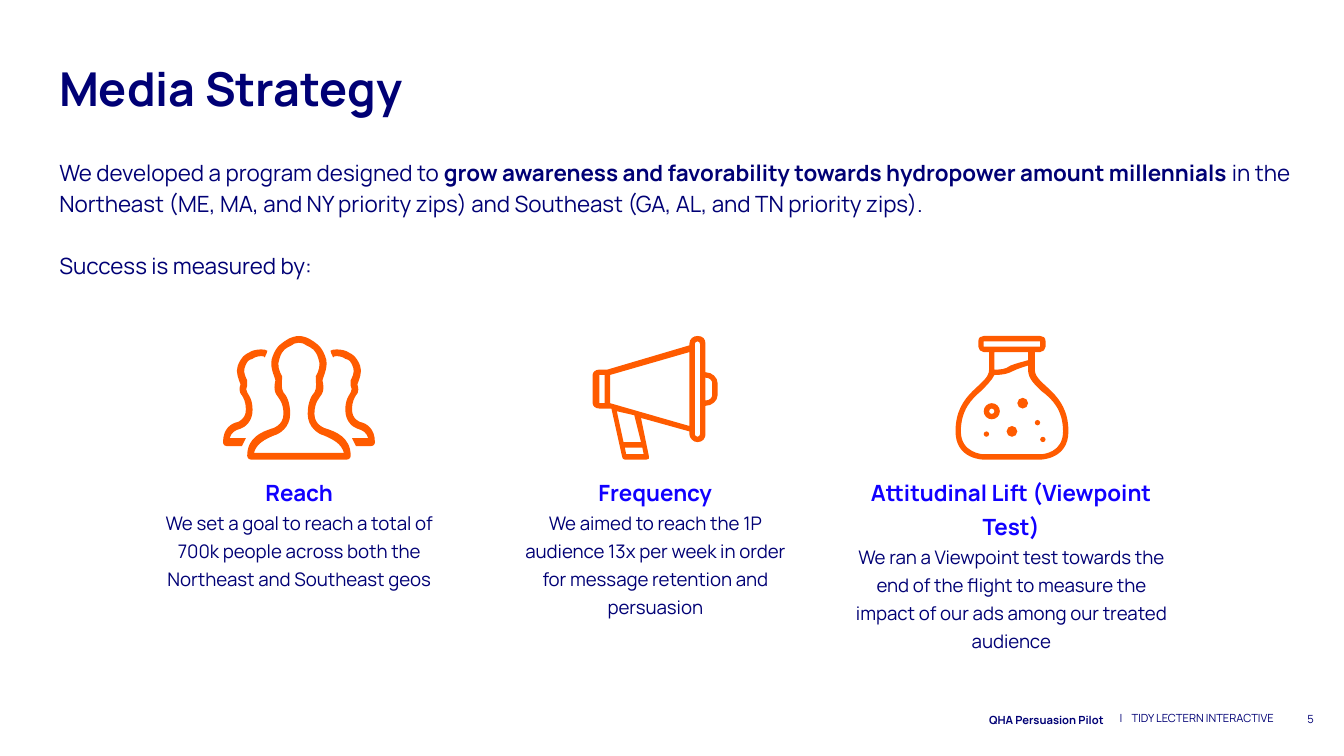
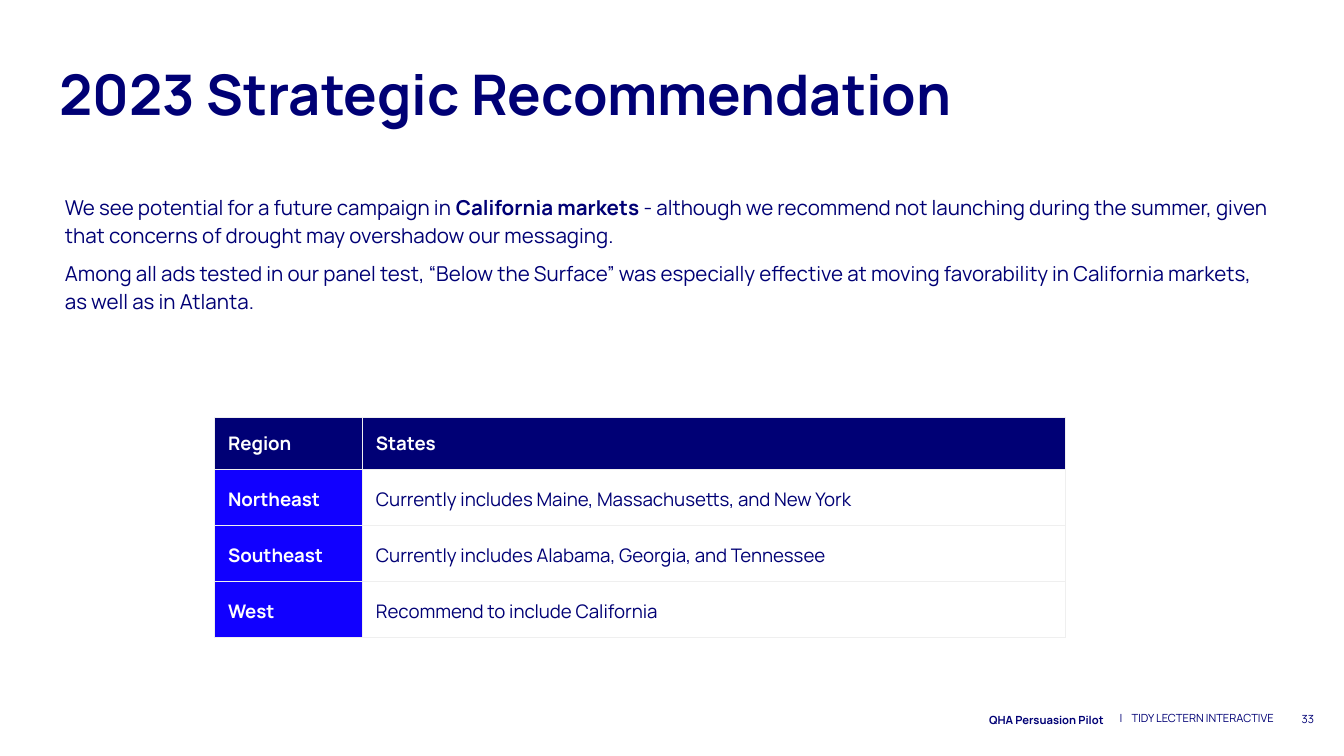
from lxml import etree
from pptx import Presentation
from pptx.dml.color import RGBColor
from pptx.enum import text
from pptx.oxml import ns
from pptx.util import Pt

FONT = "Manrope"
COLORS = {"navy": "000075", "blue": "1100FF", "orange": "FF5B00", "white": "FFFFFF", "rule": "EFEFEF"}
LEFT, CENTER, RIGHT = text.PP_ALIGN.LEFT, text.PP_ALIGN.CENTER, text.PP_ALIGN.RIGHT
TOP, MIDDLE = text.MSO_ANCHOR.TOP, text.MSO_ANCHOR.MIDDLE
INSET = 7.2
ICON_UNIT = Pt(0.72)

PROJECT = "QHA Persuasion Pilot"
AGENCY = "|\tTIDY LECTERN INTERACTIVE"

STRATEGY = {
    "title": "Media Strategy", "size": 25, "title_area": (653, 40.3), "number": "5",
    "intro": [
        [("We developed a program designed to ", False),
         ("grow awareness and favorability towards hydropower amount millennials", True),
         (" in the Northeast (ME, MA, and NY priority zips) and Southeast (GA, AL, and TN priority zips).", False)],
        [("Success is measured by:", False)],
    ],
    "measures": [
        (77.8, 164.9, 126.7, "Reach",
         "We set a goal to reach a total of 700k people across both the Northeast and Southeast geos"),
        (268.6, 164.9, 102.2, "Frequency",
         "We aimed to reach the 1P audience 13x per week in order for message retention and persuasion"),
        (449.3, 185, 136.1, "Attitudinal Lift (Viewpoint Test)",
         "We ran a Viewpoint test towards the end of the flight to measure the impact of our ads "
         "among our treated audience"),
    ],
}

RECOMMENDATION = {
    "title": "2023 Strategic Recommendation", "size": 30, "title_area": (671, 54), "number": "33",
    "intro": [
        [("We see potential for a future campaign in ", False), ("California markets", True),
         (" - although we recommend not launching during the summer, given that concerns of drought "
          "may overshadow our messaging.", False)],
        [("Among all ads tested in our panel test, “Below the Surface” was especially effective at "
          "moving favorability in California markets, as well as in Atlanta.", False)],
    ],
    "regions": [
        ("Region", "States"),
        ("Northeast", "Currently includes Maine, Massachusetts, and New York"),
        ("Southeast", "Currently includes Alabama, Georgia, and Tennessee"),
        ("West", "Recommend to include California"),
    ],
}

HEAD_OUTER = [
    (222.5, 250), (220, 250, 217, 251, 215, 252), (210, 255, 206, 257, 203, 265),
    (200, 272, 204, 279, 205, 283), (203, 291, 206, 294, 206, 294), (207, 296, 211, 299, 211, 308),
    (211, 317, 202, 319, 202, 319), (196, 321, 184, 325, 184, 339), (184, 339, 184, 342, 187, 342),
    (222.5, 342)]
HEAD_INNER = [
    (222.5, 255), (220, 255, 218, 256, 217, 257), (213, 259, 210, 260, 208, 267),
    (206, 271, 208, 277, 210, 280), (210, 284, 209, 289, 211, 292), (213, 294, 216, 299, 216, 308),
    (216, 318, 208, 323, 204, 324), (197, 327, 191, 330, 189, 337), (222.5, 337)]
NEIGHBOR = [
    (179, 319), (182, 318, 188, 314, 188, 305), (188, 297, 185, 294, 184, 292),
    (183, 290, 183, 289, 184, 287), (184, 286, 184, 284, 184, 283), (183, 281, 181, 277, 182, 274),
    (184, 268, 185, 268, 188, 267), (189, 266, 192, 265, 194, 265), (196, 265, 197, 265, 197, 266),
    (198, 264, 199, 262, 199, 261), (198, 260, 196, 260, 194, 260), (191, 260, 187, 261, 186, 262),
    (182, 264, 180, 265, 177, 272), (175, 277, 178, 283, 179, 286), (177, 292, 180, 294, 180, 294),
    (181, 296, 183, 298, 183, 305), (183, 312, 177, 314, 177, 314), (172, 315, 166, 319, 166, 329),
    (166, 329, 166, 332, 169, 332), (180, 332), (183, 326), (171, 326), (172, 322, 175, 320, 179, 319)]
MEGAPHONE = [
    [(525, 277), (525, 256), (525, 252, 523, 250, 519, 250), (516, 250, 513, 252, 513, 256), (513, 257),
     (452, 275), (446, 275), (443, 275, 441, 277, 441, 279), (441, 300), (441, 302, 443, 304, 446, 304),
     (455, 304), (463, 340), (463, 341, 464, 342, 465, 342), (481, 342), (483, 342, 483, 341, 483, 340),
     (477, 311), (513, 321), (513, 323), (513, 326, 516, 329, 519, 329), (523, 329, 525, 326, 525, 323),
     (525, 302), (530, 302, 534, 298, 534, 294), (534, 285), (534, 281, 530, 277, 525, 277)],
    [(525, 281), (528, 281, 530, 283, 530, 285), (530, 294), (530, 296, 528, 298, 525, 298)],
    [(517, 256), (517, 255, 518, 254, 519, 254), (520, 254, 521, 255, 521, 256), (521, 323),
     (521, 324, 520, 325, 519, 325), (518, 325, 517, 324, 517, 323)],
    [(454, 279), (513, 262), (513, 317), (454, 300)],
    [(459, 306), (472, 309), (477, 329), (464, 329)],
    [(465, 333), (478, 333), (479, 338), (466, 338)],
    [(446, 279), (450, 279), (450, 300), (446, 300)],
]
FLASK_OUTER = [
    (753, 250), (732, 250), (730, 250, 728, 251, 728, 254), (728, 258), (728, 260, 730, 262, 732, 262),
    (736, 262), (736, 275), (736, 287, 711, 291, 711, 321), (711, 342, 732, 342, 732, 342), (753, 342)]
FLASK_HOLES = [
    [(732, 254), (774, 254), (774, 258), (732, 258)],
    [(740, 262), (765, 262), (765, 268), (762, 269, 757, 270, 752, 272), (748, 275, 744, 275, 740, 275)],
    [(774, 338), (732, 338), (731, 338, 715, 337, 715, 321), (715, 305, 723, 297, 730, 291),
     (734, 287, 738, 283, 740, 279), (747, 279, 750, 278, 754, 276), (758, 274, 762, 273, 765, 272),
     (765, 275), (765, 282, 770, 286, 775, 291), (783, 297, 791, 305, 791, 321),
     (791, 337, 776, 338, 774, 338)],
]
BUBBLES = [(753, 321, 4), (761, 300, 4), (772, 314.5, 2), (776, 327, 2), (738, 306, 6), (738, 306, 2),
           (734, 323, 2)]


def color(name):
    return RGBColor.from_string(COLORS[name])


def outline(steps):
    points = [step[i:i + 2] for step in steps for i in range(0, len(step), 2)]
    return points, [len(step) // 2 for step in steps[1:]]


def mirror(contour, axis):
    points, counts = contour
    return [(2 * axis - x, y) for x, y in reversed(points)], counts[::-1]


def symmetric(steps):
    points, counts = outline(steps)
    others, other_counts = mirror((points, counts), steps[0][0])
    return points + others[1:], counts + other_counts


def circle(x, y, radius):
    k = 0.55 * radius
    r = radius
    return outline([
        (x + r, y), (x + r, y + k, x + k, y + r, x, y + r), (x - k, y + r, x - r, y + k, x - r, y),
        (x - r, y - k, x - k, y - r, x, y - r), (x + k, y - r, x + r, y - k, x + r, y)])


def bend(lines):
    curve = etree.Element(ns.qn("a:cubicBezTo"))
    lines[0].addprevious(curve)
    for line in lines:
        curve.append(line[0])
        line.getparent().remove(line)


def add_icon(page, contours):
    builder, all_counts = None, []
    for contour, counts in contours:
        points = [(x * ICON_UNIT, y * ICON_UNIT) for x, y in contour]
        if builder is None:
            builder = page.shapes.build_freeform(*points[0], scale=1.0)
        else:
            builder.move_to(*points[0])
        builder.add_line_segments(points[1:], close=False)
        all_counts += counts
    icon = builder.convert_to_shape()
    lines = iter(list(icon._element.iter(ns.qn("a:lnTo"))))
    for count in all_counts:
        step = [next(lines) for _ in range(count)]
        if count == 3:
            bend(step)
    for start in list(icon._element.iter(ns.qn("a:moveTo")))[1:]:
        start.addprevious(etree.Element(ns.qn("a:close")))
    etree.SubElement(next(icon._element.iter(ns.qn("a:path"))), ns.qn("a:close"))
    icon.shadow.inherit = False
    icon.fill.solid()
    icon.fill.fore_color.rgb = color("orange")
    icon.line.fill.background()


def style(para, size, ink="navy", bold=False, align=LEFT, spacing=None, before=None):
    para.alignment = align
    para.line_spacing = spacing
    para.space_before = before
    font = para.font
    font.name, font.size, font.bold = FONT, Pt(size), bold
    font.color.rgb = color(ink)


def frame_of(box, anchor=TOP, inset=INSET):
    frame = box.text_frame
    frame.word_wrap = True
    frame.auto_size = text.MSO_AUTO_SIZE.NONE
    frame.vertical_anchor = anchor
    frame.margin_left = frame.margin_right = frame.margin_top = frame.margin_bottom = Pt(inset)
    return frame


def add_box(page, place, anchor=TOP, inset=INSET):
    return frame_of(page.shapes.add_textbox(*map(Pt, place)), anchor, inset)


def add_intro(page, place, paragraphs, size, gap):
    frame = add_box(page, place)
    for index, spans in enumerate(paragraphs):
        para = frame.add_paragraph() if index else frame.paragraphs[0]
        for words, bold in spans:
            span = para.add_run()
            span.text = words
            if bold:
                span.font.bold = True
        style(para, size, spacing=1.15, before=Pt(gap) if index else None)


def add_page(deck, content):
    page = deck.slides.add_slide(deck.slide_layouts[5])
    title = page.shapes.title
    title.left, title.top, title.width, title.height = map(Pt, (24.5, 24.6, *content["title_area"]))
    title.text = content["title"]
    style(frame_of(title).paragraphs[0], content["size"], bold=True)

    para = add_box(page, (87.8, 378.7, 510.5, 13), MIDDLE).paragraphs[0]
    para.text = PROJECT
    style(para, 6, bold=True, align=RIGHT, spacing=1.15)

    frame = add_box(page, (514.8, 378.4, 171.4, 13), inset=2.9)
    frame.margin_left, frame.margin_right = Pt(85), 0
    para = frame.paragraphs[0]
    para.text = AGENCY
    tabs = etree.SubElement(para._p.get_or_add_pPr(), ns.qn("a:tabLst"))
    etree.SubElement(tabs, ns.qn("a:tab"), pos=str(Pt(6.4)), algn="l")
    style(para, 6)

    para = add_box(page, (667.8, 369.7, 43.2, 31), MIDDLE).paragraphs[0]
    para.text = content["number"]
    style(para, 6, align=RIGHT)
    return page


def add_measures(page, measures):
    for left, width, height, heading, detail in measures:
        frame = add_box(page, (left, 246, width, height))
        frame.text = heading
        style(frame.paragraphs[0], 12, "blue", True, CENTER, 1.25)
        para = frame.add_paragraph()
        para.text = detail
        style(para, 10, align=CENTER, spacing=1.25)


def add_borders(cell):
    properties = cell._tc.get_or_add_tcPr()
    for index, side in enumerate(("lnL", "lnR", "lnT", "lnB")):
        line = etree.Element(ns.qn("a:" + side), w=str(Pt(0.75)))
        fill = etree.SubElement(line, ns.qn("a:solidFill"))
        etree.SubElement(fill, ns.qn("a:srgbClr"), val=COLORS["rule"])
        properties.insert(index, line)


def add_regions(page, regions):
    widths, heights = (79.2, 376.6), [27.4] + [30] * (len(regions) - 1)
    place = (115, 223.5, sum(widths), sum(heights))
    table = page.shapes.add_table(len(regions), len(widths), *map(Pt, place)).table
    table.first_row = table.horz_banding = False
    for column, width in zip(table.columns, widths):
        column.width = Pt(width)
    for r, values in enumerate(regions):
        table.rows[r].height = Pt(heights[r])
        for c, value in enumerate(values):
            cell = table.cell(r, c)
            cell.text = value
            cell.margin_left = cell.margin_right = cell.margin_top = cell.margin_bottom = Pt(INSET)
            cell.vertical_anchor = TOP if r else MIDDLE
            fill = "navy" if r == 0 else "white" if c else "blue"
            cell.fill.solid()
            cell.fill.fore_color.rgb = color(fill)
            add_borders(cell)
            plain = fill == "white"
            style(cell.text_frame.paragraphs[0], 10, "navy" if plain else "white", not plain,
                  spacing=1.15 if r else None)


def main():
    deck = Presentation()
    deck.slide_width, deck.slide_height = Pt(720), Pt(405)

    page = add_page(deck, STRATEGY)
    add_intro(page, (24.7, 76.1, 676.8, 96.5), STRATEGY["intro"], 12, 16.6)
    add_measures(page, STRATEGY["measures"])
    neighbor = outline(NEIGHBOR)
    add_icon(page, [symmetric(HEAD_OUTER), symmetric(HEAD_INNER), neighbor, mirror(neighbor, 222.5)])
    add_icon(page, map(outline, MEGAPHONE))
    add_icon(page, [symmetric(FLASK_OUTER), *map(outline, FLASK_HOLES), *(circle(*b) for b in BUBBLES)])

    page = add_page(deck, RECOMMENDATION)
    add_intro(page, (27.7, 95.2, 664.6, 79.2), RECOMMENDATION["intro"], 11, 5)
    add_regions(page, RECOMMENDATION["regions"])
    deck.save("out.pptx")


if __name__ == "__main__":
    main()
